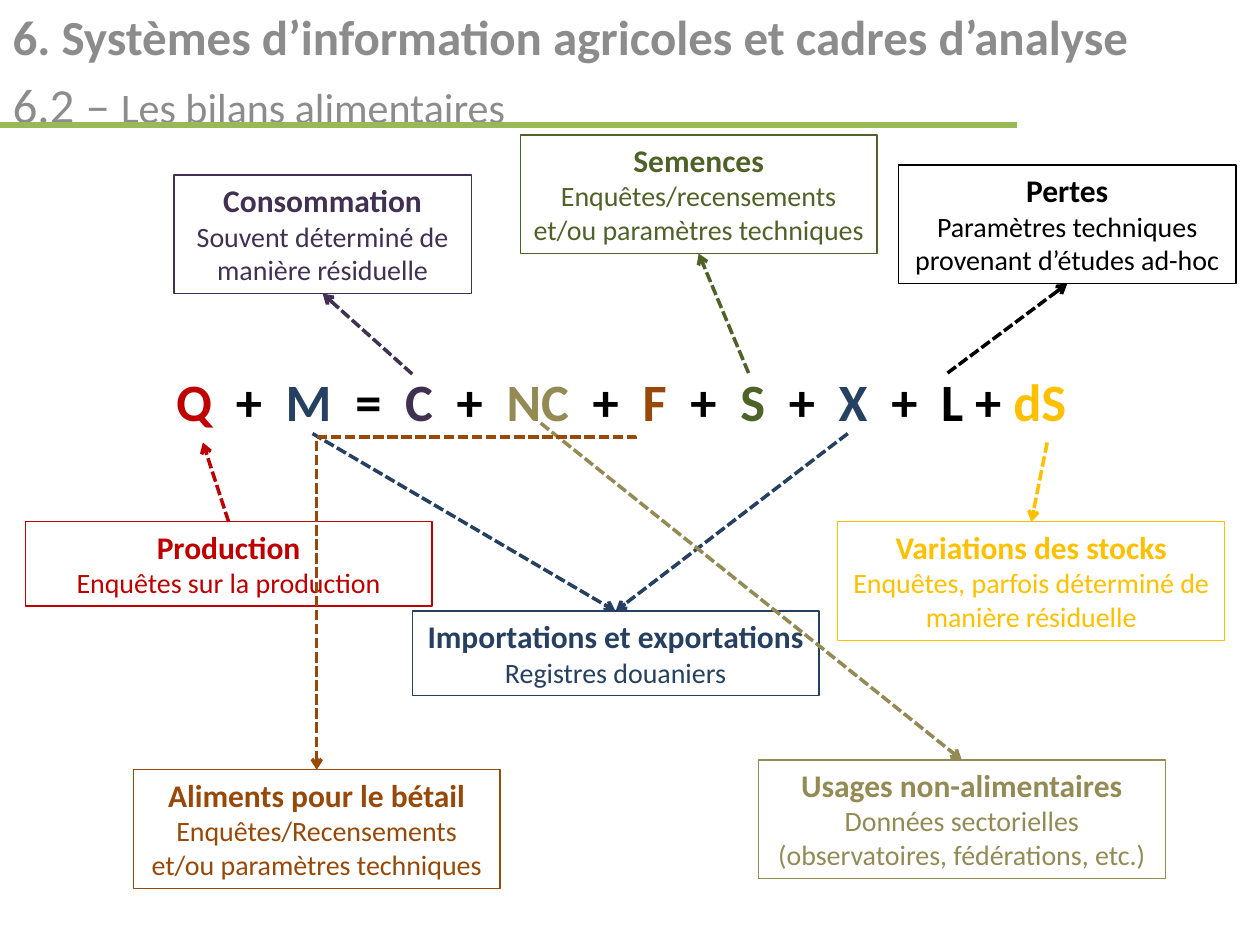
from dataclasses import dataclass

from lxml.etree import SubElement
from pptx import Presentation
from pptx.dml.color import RGBColor
from pptx.enum.dml import MSO_LINE_DASH_STYLE as Dash
from pptx.enum.shapes import MSO_CONNECTOR as Link, MSO_SHAPE as Preset
from pptx.enum.text import MSO_ANCHOR as Anchor, MSO_AUTO_SIZE as AutoSize, PP_ALIGN as Align
from pptx.oxml.ns import qn
from pptx.util import Cm, Pt

FONT = "Calibri"
GREY = RGBColor(0x8C, 0x8C, 0x8C)
RULE_GREEN = RGBColor(0x98, 0xB9, 0x55)
BLACK = RGBColor(0, 0, 0)
RED = RGBColor(0xC0, 0, 0)
NAVY = RGBColor(0x25, 0x40, 0x61)
PURPLE = RGBColor(0x40, 0x31, 0x52)
KHAKI = RGBColor(0x94, 0x8A, 0x54)
BROWN = RGBColor(0x98, 0x48, 0x07)
GREEN = RGBColor(0x4F, 0x62, 0x28)
AMBER = RGBColor(0xFF, 0xC0, 0)
TOP, BOTTOM = 0, 2
TALL, SHORT = 2.39, 1.7


@dataclass
class Component:
    """A box and the points of the equation it is linked to, in cm."""
    heading: str
    method: str
    color: RGBColor
    left: float
    top: float
    width: float
    height: float
    terms: tuple = ()
    side: int = TOP
    towards_term: bool = False


FEED = Component("Aliments pour le bétail", "Enquêtes/Recensements et/ou paramètres techniques",
                 BROWN, 2.69, 15.52, 7.39, TALL)
FEED_TERM = (12.8, 8.86)

COMPONENTS = [
    Component("Importations et exportations", "Registres douaniers",
              NAVY, 8.31, 12.32, 8.2, SHORT, ((6.3, 8.74), (17.09, 8.74))),
    Component("Semences", "Enquêtes/recensements et/ou paramètres techniques",
              GREEN, 10.49, 2.72, 7.19, TALL, ((15.09, 7.52),), BOTTOM),
    FEED,
    Component("Variations des stocks", "Enquêtes, parfois déterminé de manière résiduelle",
              AMBER, 16.89, 10.52, 7.8, TALL, ((21.11, 8.92),)),
    Component("Pertes", "Paramètres techniques provenant d’études ad-hoc",
              BLACK, 18.11, 3.33, 6.81, TALL, ((19.1, 7.52),), BOTTOM),
    Component("Consommation", "Souvent déterminé de manière résiduelle",
              PURPLE, 3.51, 3.53, 5.99, TALL, ((8.31, 7.54),), BOTTOM),
    Component("Usages non-alimentaires", "Données sectorielles (observatoires, fédérations, etc.)",
              KHAKI, 15.29, 15.32, 8.2, TALL, ((10.9, 8.53),)),
    Component("Production", "Enquêtes sur la production",
              RED, 0.51, 10.52, 8.2, SHORT, ((4.09, 8.92),), TOP, True),
]

EQUATION = [
    ("Q", RED), ("  +  ", BLACK), ("M", NAVY), ("  =  ", BLACK), ("C", PURPLE),
    ("  +  ", BLACK), ("NC", KHAKI), ("  +  ", BLACK), ("F", BROWN), ("  +  ", BLACK),
    ("S", GREEN), ("  +  ", BLACK), ("X", NAVY), ("  +  L + ", BLACK), ("dS", AMBER),
]


def style_run(run, size: float, color: RGBColor, bold: bool) -> None:
    font = run.font
    font.name, font.size, font.bold = FONT, Pt(size), bold
    font.color.rgb = color


def add_line(slide, kind, start: tuple, end: tuple, color: RGBColor, width: float):
    line = slide.shapes.add_connector(kind, *map(Cm, (*start, *end)))
    line.line.color.rgb = color
    line.line.width = Pt(width)
    SubElement(line._element.spPr, qn("a:effectLst"))
    return line


def add_arrow(slide, kind, start: tuple, end: tuple, color: RGBColor):
    arrow = add_line(slide, kind, start, end, color, 2)
    arrow.line.dash_style = Dash.SQUARE_DOT
    SubElement(arrow.line._get_or_add_ln(), qn("a:tailEnd"), type="arrow")
    return arrow


def add_box(slide, part: Component):
    box = slide.shapes.add_shape(
        Preset.RECTANGLE, *map(Cm, (part.left, part.top, part.width, part.height)))
    box.shadow.inherit = False
    box.fill.background()
    box.line.color.rgb = part.color
    box.line.width = Pt(0.75)
    frame = box.text_frame
    frame.word_wrap = True
    frame.auto_size = AutoSize.SHAPE_TO_FIT_TEXT
    frame.vertical_anchor = Anchor.TOP
    frame.text = f"{part.heading}\n{part.method}"
    for paragraph, size, bold in zip(frame.paragraphs, (18, 16), (True, False)):
        paragraph.alignment = Align.CENTER
        style_run(paragraph.runs[0], size, part.color, bold)
    return box


def link_box(slide, part: Component, box) -> None:
    anchor = (part.left + part.width / 2, part.top + (part.height if part.side == BOTTOM else 0))
    for term in part.terms:
        if part.towards_term:
            add_arrow(slide, Link.STRAIGHT, anchor, term, part.color).begin_connect(box, part.side)
        else:
            add_arrow(slide, Link.STRAIGHT, term, anchor, part.color).end_connect(box, part.side)


def add_feed_elbow(slide, part: Component, term: tuple) -> None:
    """Elbow turned a quarter, running left and then down to the top of the box."""
    end_x, end_y = part.left + part.width / 2, part.top
    mid_x, mid_y = (term[0] + end_x) / 2, (term[1] + end_y) / 2
    half_run, half_rise = (end_y - term[1]) / 2, (term[0] - end_x) / 2
    elbow = add_arrow(slide, Link.ELBOW, (mid_x - half_run, mid_y - half_rise),
                      (mid_x + half_run, mid_y + half_rise), part.color)
    properties = elbow._element.spPr
    properties.find(qn("a:xfrm")).set("rot", "5400000")
    guides = properties.find(qn("a:prstGeom")).find(qn("a:avLst"))
    SubElement(guides, qn("a:gd"), name="adj1", fmla="val -700")


def add_title(slide) -> None:
    title = slide.shapes.title
    title.left, title.top, title.width, title.height = map(Cm, (0, 0, 25.4, 2.79))
    frame = title.text_frame
    frame.word_wrap = True
    frame.auto_size = AutoSize.NONE
    frame.vertical_anchor = Anchor.TOP
    frame.text = "6. Systèmes d’information agricoles et cadres d’analyse\n6.2 – "
    chapter, section = frame.paragraphs
    section.add_run().text = "Les bilans alimentaires"
    for paragraph in (chapter, section):
        paragraph.alignment = Align.LEFT
        paragraph.space_before = Pt(5.6)
    style_run(chapter.runs[0], 28, GREY, True)
    for run, size in zip(section.runs, (28, 24)):
        style_run(run, size, GREY, False)


def add_equation(slide) -> None:
    equation = slide.shapes.add_textbox(*map(Cm, (3.3, 7.32, 19, 1.55)))
    frame = equation.text_frame
    frame.word_wrap = True
    frame.auto_size = AutoSize.SHAPE_TO_FIT_TEXT
    for symbol, color in EQUATION:
        run = frame.paragraphs[0].add_run()
        run.text = symbol
        style_run(run, 30, color, True)


def main() -> None:
    deck = Presentation()
    deck.slide_width, deck.slide_height = Cm(25.4), Cm(19.05)
    slide = deck.slides.add_slide(deck.slide_layouts[5])

    # Heading and its rule
    add_title(slide)
    add_line(slide, Link.STRAIGHT, (0, 2.52), (20.5, 2.52), RULE_GREEN, 3)

    # Balance equation
    add_equation(slide)

    # Data sources of each term
    for part in COMPONENTS:
        link_box(slide, part, add_box(slide, part))
    add_feed_elbow(slide, FEED, FEED_TERM)

    deck.save("out.pptx")


if __name__ == "__main__":
    main()
